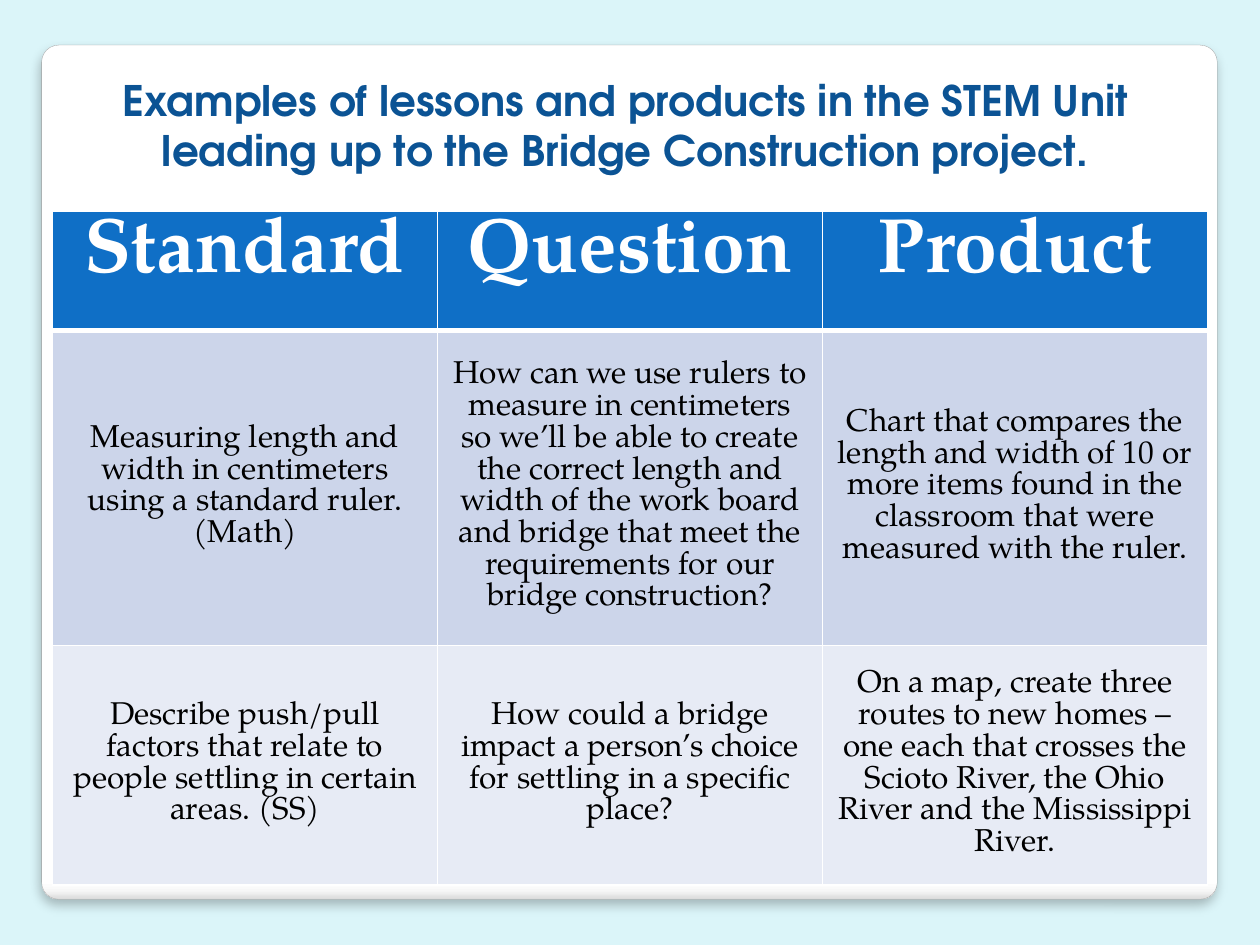
import pptx
import pptx.util
import pptx.dml.color
import pptx.enum.shapes
import pptx.enum.text
import pptx.oxml.ns
from lxml import etree

Cm, Pt = pptx.util.Cm, pptx.util.Pt
qn = pptx.oxml.ns.qn
MID = pptx.enum.text.MSO_ANCHOR.MIDDLE
TOP = pptx.enum.text.MSO_ANCHOR.TOP

TITLE = ("Examples of lessons and products in the STEM Unit "
         "leading up to the Bridge Construction project.")
ROWS = [
    ("Standard", "Question", "Product"),
    ("Measuring length and width in centimeters using a standard ruler. (Math)",
     "How can we use rulers to measure in centimeters so we’ll be able to "
     "create the correct length and width of the work board and bridge that "
     "meet the requirements for our bridge construction?",
     "Chart that compares the length and width of 10 or more items found in "
     "the classroom that were measured with the ruler."),
    ("Describe push/pull factors that relate to people settling in certain areas. (SS)",
     "How could a bridge impact a person’s choice for settling in a specific place?",
     "On a map, create three routes to new homes – one each that crosses the "
     "Scioto River, the Ohio River and the Mississippi River."),
]
HEAD = {"name": "TeX Gyre Pagella", "size": Pt(44), "bold": True, "color": "FFFFFF"}
BODY = {"name": "TeX Gyre Pagella", "size": Pt(18), "bold": False, "color": "000000"}
TOPIC = {"name": "TeX Gyre Adventor", "size": Pt(24), "bold": True, "color": "0B5394"}
# height in cm, fill, font, anchor, top and bottom border in points
BANDS = [
    (2.41, "0F6FC6", HEAD, TOP, 1, 3),
    (6.35, "CCD5EA", BODY, MID, 3, 1),
    (4.83, "E7EBF5", BODY, MID, 1, 1),
]
STOPS = [(0, "FFFFFF"), (98, "FFFFFF"), (99, "F7F7F7"), (100, "DADADA")]
COL = 7.76


def rgb(code):
    return pptx.dml.color.RGBColor.from_string(code)


def paint(fill, code):
    fill.solid()
    fill.fore_color.rgb = rgb(code)


def node(top, tag, **attrs):
    return etree.SubElement(top, qn(tag), {k: str(v) for k, v in attrs.items()})


def write(frame, text, font):
    par = frame.paragraphs[0]
    par.alignment = pptx.enum.text.PP_ALIGN.CENTER
    run = par.add_run()
    run.text = text
    for key, val in font.items():
        if key == "color":
            run.font.color.rgb = rgb(val)
        else:
            setattr(run.font, key, val)


def edge(cell, side, width):
    """Add a white border; call it before the cell is filled."""
    line = node(cell._tc.get_or_add_tcPr(), "a:" + side, w=Pt(width))
    node(node(line, "a:solidFill"), "a:srgbClr", val="FFFFFF")


def add_card(slide):
    """Add the rounded white panel with its shaded foot and soft shadow."""
    kind = pptx.enum.shapes.MSO_SHAPE.ROUNDED_RECTANGLE
    card = slide.shapes.add_shape(kind, Cm(0.84), Cm(0.91), Cm(23.7), Cm(17.22))
    card.adjustments[0] = 0.02
    card.fill.gradient()
    card.fill.gradient_angle = 270
    stops = card._element.spPr.find(".//" + qn("a:gsLst"))
    for old in list(stops):
        stops.remove(old)
    for pos, code in STOPS:
        node(node(stops, "a:gs", pos=pos * 1000), "a:srgbClr", val=code)
    card.line.color.rgb = rgb("A4A4A4")
    card.line.width = Pt(0.16)
    card.shadow.inherit = False
    glow = card._element.spPr.find(qn("a:effectLst"))
    shade = node(glow, "a:outerShdw", blurRad=Pt(6), dist=Pt(4),
                 dir=90 * 60000, algn="t", rotWithShape=0)
    node(node(shade, "a:srgbClr", val="000000"), "a:alpha", val=25000)


def add_grid(slide):
    tall = sum(band[0] for band in BANDS)
    wide = COL * len(ROWS[0])
    grid = slide.shapes.add_table(len(ROWS), len(ROWS[0]), Cm(1.06), Cm(4.25),
                                  Cm(wide), Cm(tall)).table
    for col in grid.columns:
        col.width = Cm(COL)
    for r, (texts, band) in enumerate(zip(ROWS, BANDS)):
        high, code, font, anchor, above, below = band
        grid.rows[r].height = Cm(high)
        for c, text in enumerate(texts):
            cell = grid.cell(r, c)
            sides = {"lnL": 1, "lnR": 1, "lnT": above, "lnB": below}
            for side, width in sides.items():
                edge(cell, side, width)
            paint(cell.fill, code)
            cell.vertical_anchor = anchor
            write(cell.text_frame, text, font)


def main():
    deck = pptx.Presentation()
    deck.slide_width, deck.slide_height = Cm(25.4), Cm(19.05)
    slide = deck.slides.add_slide(deck.slide_layouts[6])
    paint(slide.background.fill, "DBF5F9")
    add_card(slide)
    add_grid(slide)
    box = slide.shapes.add_textbox(Cm(1.27), Cm(1.37), Cm(22.66), Cm(2.31))
    box.text_frame.word_wrap = True
    write(box.text_frame, TITLE, TOPIC)
    deck.save("out.pptx")


if __name__ == "__main__":
    main()
